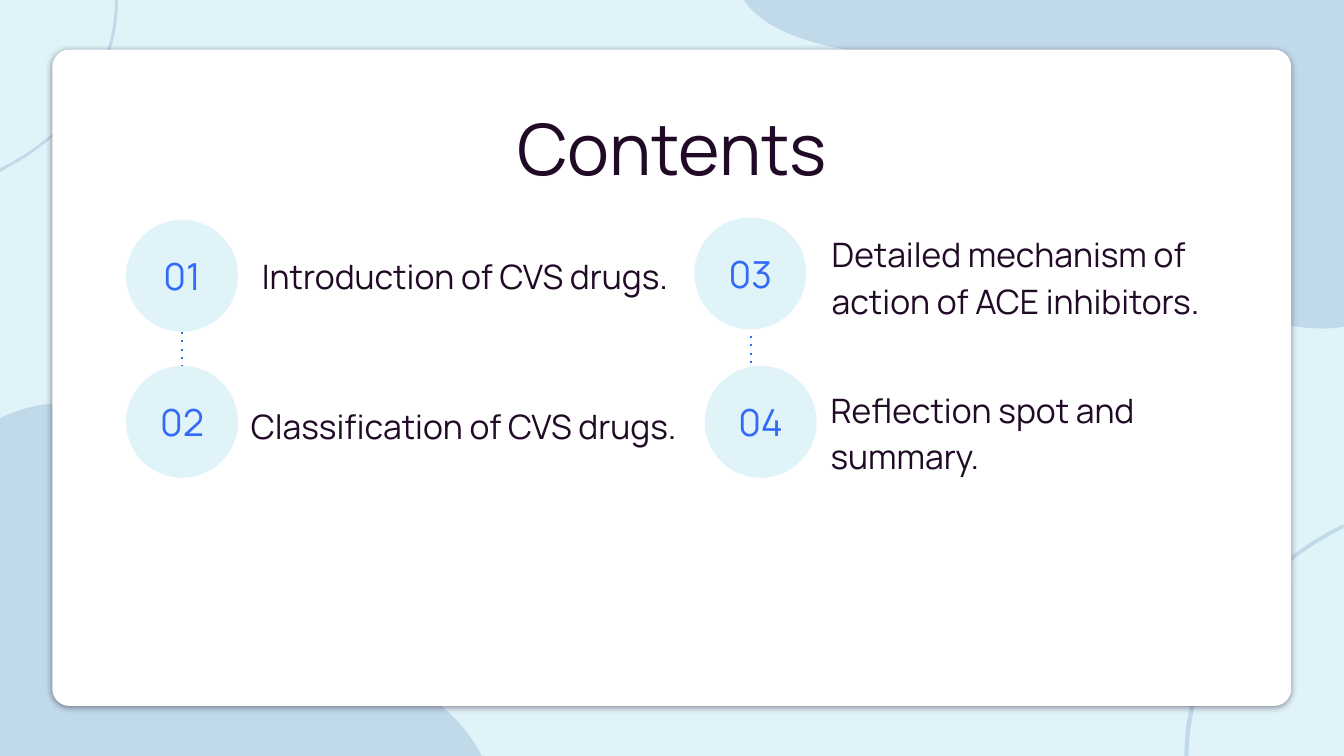
from lxml import etree
from pptx import Presentation, util as u
from pptx.dml.color import RGBColor
from pptx.enum import dml, shapes, text
from pptx.oxml import ns, parse_xml

Cm = u.Cm
WIDE, HIGH = 33.87, 19.05
DISC = 2.82
HUES = {"sky": "DFF3F8", "wave": "A0BFDB", "card": "FFFFFF",
        "ink": "210A26", "blue": "3169F8"}

# Start point, then lines (x, y) and Bezier curves (two controls, end), in cm
WAVES = [
    [(29.95, 19.05), (29.97, 17.83, 30.38, 16.59, 31.12, 15.6),
     (31.83, 14.61, 32.79, 13.84, 33.86, 13.31), (33.86, 13.21),
     (33.76, 13.26, 33.63, 13.31, 33.5, 13.39),
     (32.64, 13.87, 31.83, 14.53, 31.19, 15.32),
     (30.56, 16.15, 30.1, 17.09, 29.92, 18.14),
     (29.87, 18.44, 29.85, 18.75, 29.85, 19.05)],
    [(1.52, 10.16), (0.74, 10.16, 0, 10.54, 0, 10.54), (0, HIGH), (12.14, HIGH),
     (10.59, 15.98, 5.79, 16.56, 3.78, 15.95),
     (1.8, 15.37, 3.99, 12.42, 2.92, 10.85),
     (2.54, 10.31, 2.03, 10.16, 1.52, 10.16)],
    [(18.75, 0), (19.3, 0.89, 21.13, 1.47, 24.1, 1.47),
     (24.21, 1.47, 24.33, 1.47, 24.43, 1.47),
     (24.49, 1.47, 24.51, 1.47, 24.56, 1.47),
     (29.01, 1.47, 27.15, 5.41, 30.45, 7.47),
     (31.34, 8.03, 32.49, 8.28, 33.38, 8.28),
     (33.55, 8.28, 33.71, 8.26, WIDE, 8.23), (WIDE, 0)],
    [(2.9, 0), (2.9, 0.91, 2.59, 1.83, 2.06, 2.57),
     (1.52, 3.28, 0.79, 3.86, 0, 4.24), (0, 4.34),
     (0.1, 4.29, 0.18, 4.24, 0.25, 4.19),
     (0.91, 3.84, 1.52, 3.35, 1.98, 2.77),
     (2.46, 2.16, 2.79, 1.45, 2.92, 0.69),
     (2.95, 0.46, 2.97, 0.23, 2.97, 0)],
]

# Disc corner, then text box (left, top, width, height), in cm
STEPS = [
    ("Introduction of CVS drugs.", (3.18, 5.54), (6.27, 5.47, 11.23, 2.82)),
    ("Classification of CVS drugs.", (3.18, 9.22), (5.99, 9.02, 12.04, 3.28)),
    ("Detailed mechanism of action of ACE inhibitors.",
     (17.5, 5.48), (20.63, 5.25, 10.95, 3.33)),
    ("Reflection spot and summary.", (17.76, 9.22), (20.6, 9.42, 11.81, 2.82)),
]
LINKS = [(4.59, 8.36, 9.22), (18.92, 8.46, 9.17)]


def rgb(hue):
    return RGBColor.from_string(HUES[hue])


def put(item, values):
    for name, value in values.items():
        setattr(item, name, value)


def place(shape, box):
    put(shape, dict(zip(("left", "top", "width", "height"), map(Cm, box))))


def paint(shape, hue):
    shape.shadow.inherit = False
    shape.fill.solid()
    shape.fill.fore_color.rgb = rgb(hue)
    shape.line.fill.background()


def write(shape, words, size, hue, align, anchor, gap=1.0):
    frame = shape.text_frame
    inset = Cm(0.33)
    put(frame, {"text": words, "word_wrap": True, "vertical_anchor": anchor,
                "auto_size": text.MSO_AUTO_SIZE.NONE,
                "margin_left": inset, "margin_right": inset,
                "margin_top": inset, "margin_bottom": inset})
    para = frame.paragraphs[0]
    put(para, {"alignment": align, "line_spacing": gap, "space_before": u.Pt(0)})
    font = para.runs[0].font
    put(font, {"name": "Manrope", "size": u.Pt(size), "bold": False})
    font.color.rgb = rgb(hue)


def clear_bullet(shape):
    props = shape.text_frame.paragraphs[0]._p.get_or_add_pPr()
    for name in ("marL", "indent"):
        props.set(name, "0")
    etree.SubElement(props, ns.qn("a:buNone"))


def add_wave(slide, path):
    """Join the end points by lines, then bend the lines that have controls."""
    first, *parts = path
    maker = slide.shapes.build_freeform(*map(Cm, first))
    maker.add_line_segments([tuple(map(Cm, part[-2:])) for part in parts], close=True)
    wave = maker.convert_to_shape()
    paint(wave, "wave")
    props = wave.element.spPr
    for line, part in zip(list(props.iter(ns.qn("a:lnTo"))), parts):
        if len(part) == 6:
            bend = etree.Element(ns.qn("a:cubicBezTo"))
            for x, y in zip(part[::2], part[1::2]):
                dot = etree.SubElement(bend, ns.qn("a:pt"))
                dot.set("x", str(Cm(x) - wave.left))
                dot.set("y", str(Cm(y) - wave.top))
            line.getparent().replace(line, bend)
    tint = props.find(".//" + ns.qn("a:srgbClr"))
    etree.SubElement(tint, ns.qn("a:alpha")).set("val", "48000")


def add_card(slide, box):
    card = slide.shapes.add_shape(shapes.MSO_SHAPE.ROUNDED_RECTANGLE, *map(Cm, box))
    card.adjustments[0] = 0.026
    paint(card, "card")
    glow = card.element.spPr.find(ns.qn("a:effectLst"))
    glow.append(parse_xml(
        f'<a:outerShdw {ns.nsdecls("a")} blurRad="57150" dist="19050" dir="5400000" '
        f'algn="bl" rotWithShape="0"><a:srgbClr val="{HUES["ink"]}">'
        '<a:alpha val="50000"/></a:srgbClr></a:outerShdw>'))


def add_step(slide, body, num, words, spot, box):
    place(body, box)
    write(body, words, 24, "ink", text.PP_ALIGN.LEFT, text.MSO_ANCHOR.MIDDLE, 1.15)
    clear_bullet(body)
    disc = slide.shapes.add_shape(shapes.MSO_SHAPE.OVAL,
                                  *map(Cm, (*spot, DISC, DISC)))
    paint(disc, "sky")
    write(disc, f"{num:02}", 26.6, "blue", text.PP_ALIGN.CENTER,
          text.MSO_ANCHOR.MIDDLE)


def add_link(slide, x, top, end):
    link = slide.shapes.add_connector(shapes.MSO_CONNECTOR.STRAIGHT,
                                      *map(Cm, (x, top, x, end)))
    link.line.color.rgb = rgb("blue")
    put(link.line, {"width": u.Pt(1.5), "dash_style": dml.MSO_LINE.ROUND_DOT})
    props = link.element.spPr
    props.find(".//" + ns.qn("a:prstDash")).set("val", "dot")
    etree.SubElement(props, ns.qn("a:effectLst"))


def main():
    deck = Presentation()
    put(deck, {"slide_width": Cm(WIDE), "slide_height": Cm(HIGH)})
    slide = deck.slides.add_slide(deck.slide_layouts.get_by_name("Comparison"))
    slide.background.fill.solid()
    slide.background.fill.fore_color.rgb = rgb("sky")
    title, *bodies = slide.placeholders

    for path in WAVES:
        add_wave(slide, path)
    add_card(slide, (1.32, 1.25, 31.22, 16.54))
    # Bring the placeholders in front of the card
    for holder in (title, *bodies):
        slide.shapes.element.append(holder.element)

    place(title, (2.65, 1.98, 28.58, 2.64))
    write(title, "Contents", 50.6, "ink", text.PP_ALIGN.CENTER,
          text.MSO_ANCHOR.TOP, 1.15)
    for num, (body, step) in enumerate(zip(bodies, STEPS), 1):
        add_step(slide, body, num, *step)
    for link in LINKS:
        add_link(slide, *link)
    deck.save("out.pptx")


if __name__ == "__main__":
    main()
